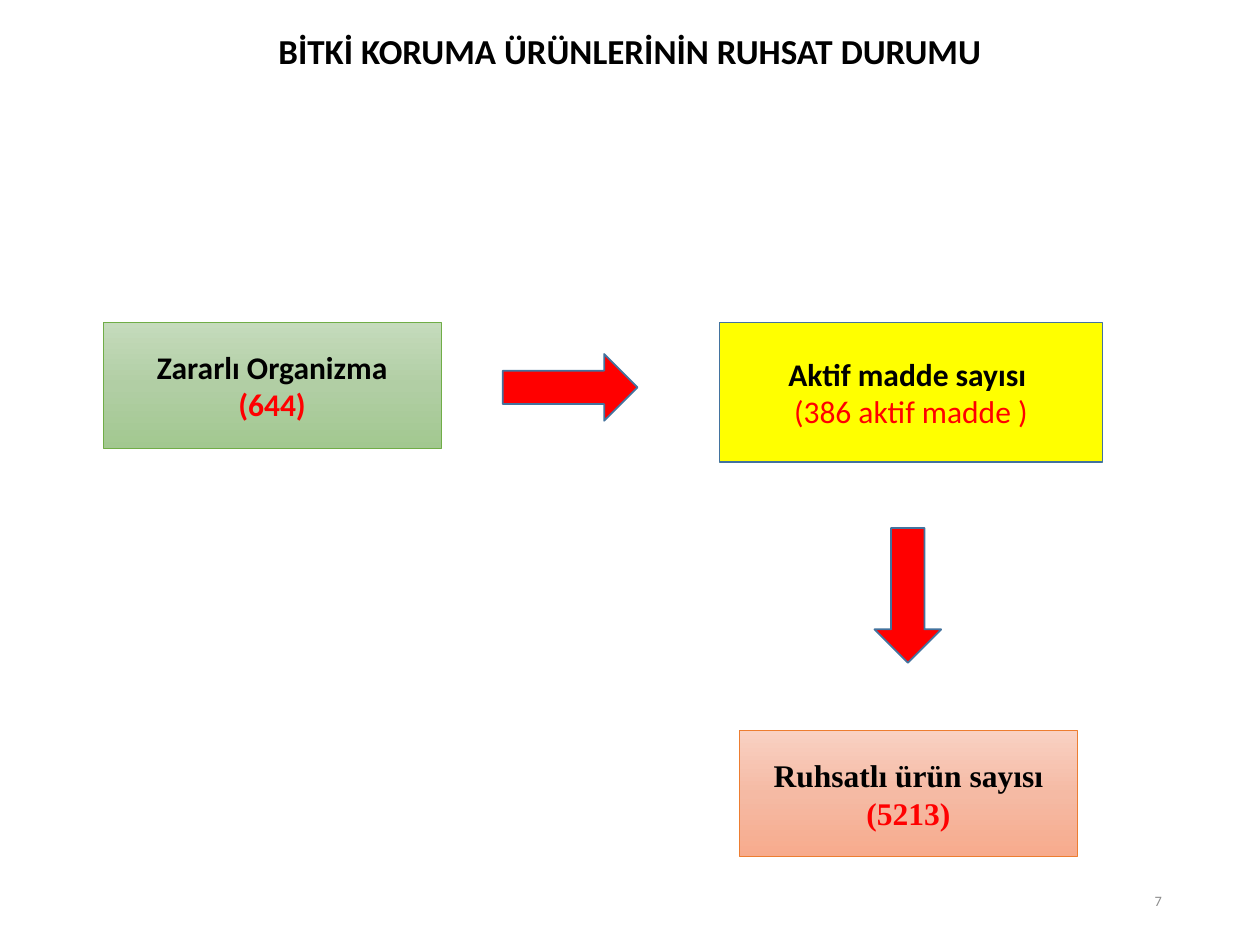
"""Build the slide on the licence status of plant protection products."""
import copy
from dataclasses import dataclass

import pptx
import pptx.dml.color
import pptx.enum.shapes
import pptx.enum.text
import pptx.util
from pptx.dml.color import RGBColor
from pptx.util import Inches

BLACK = RGBColor(0x00, 0x00, 0x00)
RED = RGBColor(0xFF, 0x00, 0x00)
GREY = RGBColor(0x8C, 0x8C, 0x8C)
BLUE = RGBColor(0x43, 0x73, 0x9E)
YELLOW = RGBColor(0xFF, 0xFF, 0x00)
GREEN = RGBColor(0x70, 0xAD, 0x47)
ORANGE = RGBColor(0xED, 0x7D, 0x31)
GREENS = (RGBColor(0xC5, 0xDB, 0xBC), RGBColor(0xB1, 0xCE, 0xA4),
          RGBColor(0xA2, 0xC8, 0x90))
PEACHES = (RGBColor(0xF9, 0xD1, 0xC3), RGBColor(0xF5, 0xBA, 0xA4),
           RGBColor(0xF7, 0xAB, 0x8D))
SANS = "Calibri"
SERIF = "Times New Roman"
KIND = pptx.enum.shapes.MSO_SHAPE
ALIGN = pptx.enum.text.PP_ALIGN
MIDDLE = pptx.enum.text.MSO_ANCHOR.MIDDLE


@dataclass(frozen=True)
class Item:
    kind: KIND
    left: float
    top: float
    width: float
    height: float
    fills: tuple[RGBColor, ...]
    edge: RGBColor = BLUE
    weight: float = 1
    label: str = ""
    count: str = ""
    face: str = SANS
    bold: bool = True


ITEMS = (
    Item(KIND.RECTANGLE, 0.82, 2.56, 2.68, 1, GREENS, GREEN, 0.5,
         "Zararlı Organizma", "(644)"),
    Item(KIND.RIGHT_ARROW, 3.99, 2.81, 1.07, 0.53, (RED,)),
    Item(KIND.RECTANGLE, 5.71, 2.56, 3.04, 1.11, (YELLOW,),
         label="Aktif madde sayısı ", count="(386 aktif madde )", bold=False),
    Item(KIND.DOWN_ARROW, 6.94, 4.19, 0.53, 1.07, (RED,)),
    Item(KIND.RECTANGLE, 5.87, 5.8, 2.68, 1, PEACHES, ORANGE, 0.5,
         "Ruhsatlı ürün sayısı", "(5213)", SERIF),
)


def write(para, text: str, size: float, color: RGBColor,
          bold: bool = True, face: str = SANS, align: ALIGN = ALIGN.CENTER) -> None:
    para.text = text
    para.alignment = align
    for run in para.runs:
        run.font.size = pptx.util.Pt(size)
        run.font.name = face
        run.font.bold = bold
        run.font.color.rgb = color


def paint(shape, fills: tuple[RGBColor, ...]) -> None:
    if len(fills) == 1:
        shape.fill.solid()
        shape.fill.fore_color.rgb = fills[0]
        return
    shape.fill.gradient()
    shape.fill.gradient_angle = 270
    stops = shape.element.xpath(".//a:gsLst")[0]
    stops.insert(1, copy.deepcopy(stops[0]))
    stops[1].set("pos", "50000")
    for stop, color in zip(shape.fill.gradient_stops, fills):
        stop.color.rgb = color


def draw(slide, item: Item) -> None:
    shape = slide.shapes.add_shape(
        item.kind, Inches(item.left), Inches(item.top),
        Inches(item.width), Inches(item.height))
    shape.shadow.inherit = False
    paint(shape, item.fills)
    shape.line.color.rgb = item.edge
    shape.line.width = pptx.util.Pt(item.weight)
    if item.label:
        frame = shape.text_frame
        frame.word_wrap = True
        frame.vertical_anchor = MIDDLE
        write(frame.paragraphs[0], item.label, 18, BLACK, face=item.face)
        write(frame.add_paragraph(), item.count, 18, RED, item.bold, item.face)


def main() -> None:
    deck = pptx.Presentation()
    deck.slide_width, deck.slide_height = Inches(10), Inches(7.5)
    slide = deck.slides.add_slide(deck.slide_layouts[5])

    title = slide.shapes.title
    title.left, title.top = Inches(0), Inches(0.13)
    title.width, title.height = Inches(10), Inches(0.59)
    title.text_frame.vertical_anchor = MIDDLE
    head = title.text_frame.paragraphs[0]
    write(head, "BİTKİ KORUMA ÜRÜNLERİNİN RUHSAT DURUMU", 20, BLACK)
    head.line_spacing = 0.9

    for item in ITEMS:
        draw(slide, item)

    page = slide.shapes.add_textbox(
        Inches(7.07), Inches(6.95), Inches(2.25), Inches(0.4)).text_frame
    page.word_wrap = True
    page.vertical_anchor = MIDDLE
    write(page.paragraphs[0], "7", 8.2, GREY, False, align=ALIGN.RIGHT)

    deck.save("out.pptx")


if __name__ == "__main__":
    main()
